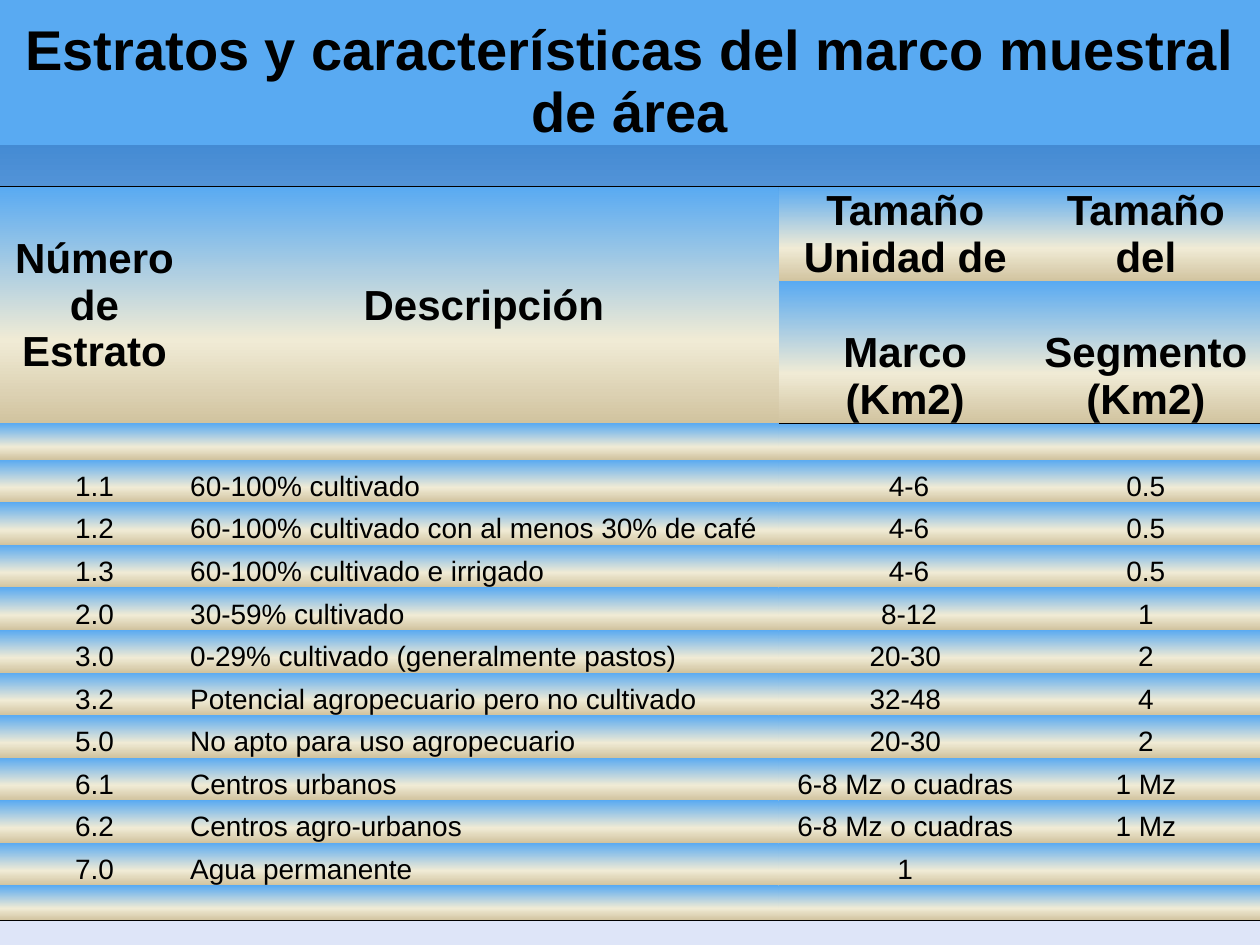
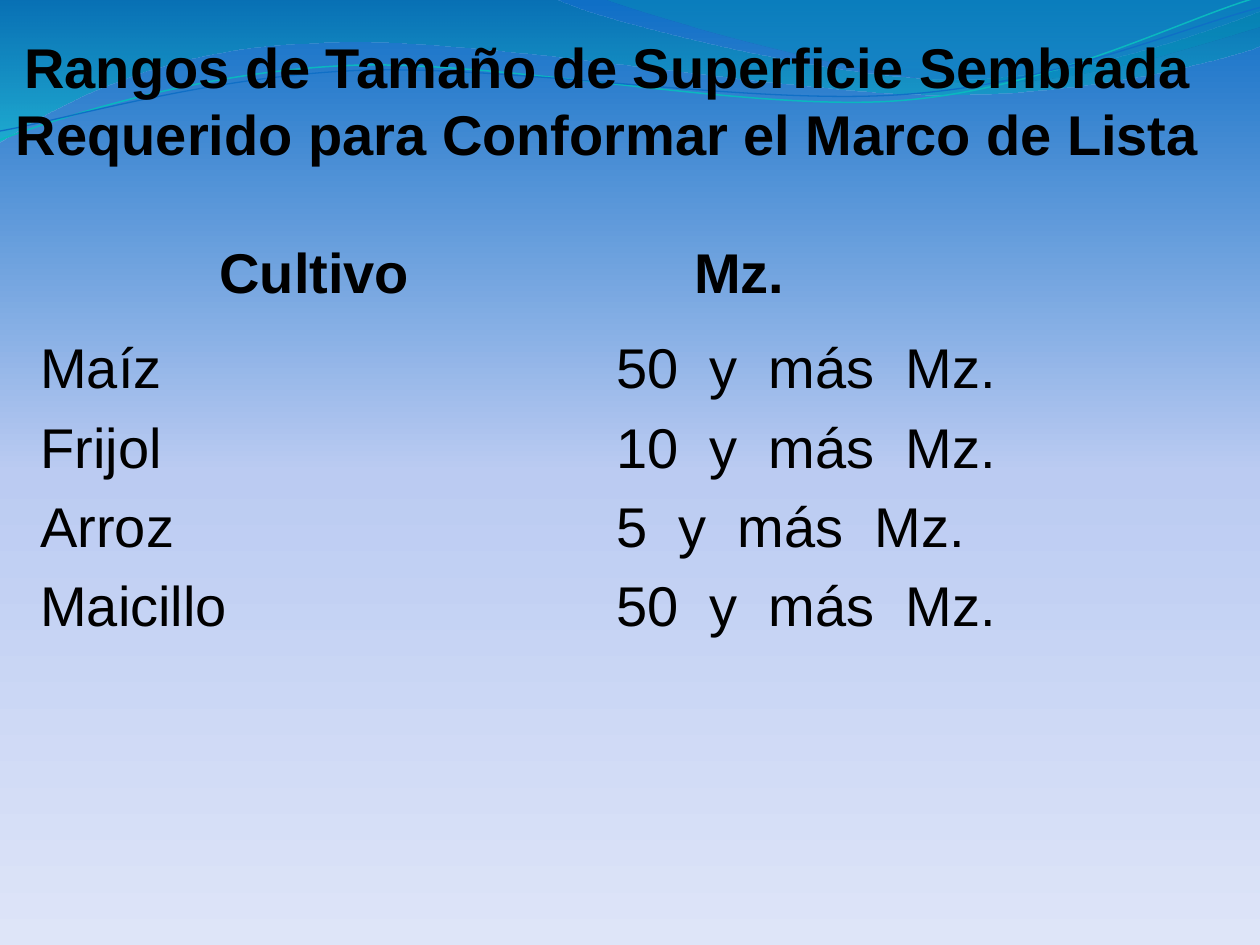
from dataclasses import dataclass
from typing import NamedTuple, Optional

import pptx
import pptx.dml.color
import pptx.enum.text
import pptx.oxml
import pptx.oxml.ns
import pptx.util

RGB = pptx.dml.color.RGBColor
ALIGN = pptx.enum.text.PP_ALIGN
ANCHOR = pptx.enum.text.MSO_ANCHOR
qn = pptx.oxml.ns.qn

# Shared look
FONT = "Arial"
BLACK = RGB(0x00, 0x00, 0x00)
SKY = RGB(0x59, 0xAA, 0xF2)
CREAM = RGB(0xF0, 0xEB, 0xD5)
SAND = RGB(0xD1, 0xC3, 0x9F)
BLUE = RGB(0x0F, 0x6F, 0xC6)
LILAC = RGB(0xBB, 0xCB, 0xF2)
PALE = RGB(0xDE, 0xE5, 0xF8)
DEEP_TEAL = RGB(0x00, 0x74, 0xA1)
AQUA = RGB(0x00, 0xC6, 0xCF)
GREEN_TEAL = RGB(0x00, 0xA1, 0xA9)
OCEAN = RGB(0x00, 0x8B, 0xBF)
TURQUOISE = RGB(0x0A, 0xB8, 0xBF)
TITLE_SIZE, HEAD_SIZE, BODY_SIZE = 32, 24, 16
PLAIN_TABLE = "{2D5ABB26-0587-4C30-8999-92F81FD0307C}"

# The slide is a grid of 10 columns by 7.5 rows of square units
SLIDE_W = pptx.util.Inches(10)
SLIDE_H = pptx.util.Inches(7.5)
UNIT = SLIDE_W / 10


def grid(units: float) -> int:
    return round(units * UNIT)


class Stop(NamedTuple):
    position: int
    color: RGB
    opacity: int = 100


class Insets(NamedTuple):
    left: float
    top: float
    right: float
    bottom: float


@dataclass(frozen=True)
class Wave:
    """A start point, then points (lines) or triples of points (curves)."""
    start: tuple
    segments: tuple
    stops: tuple = ()
    line: Optional[RGB] = None
    width: float = 0


class Stratum(NamedTuple):
    number: str
    description: str
    frame_size: str
    segment_size: str
    span: int = 2
    frame_indent: float = 0


class Crop(NamedTuple):
    name: str
    area: str


BACKDROP = (Stop(0, BLUE), Stop(50, LILAC), Stop(100, PALE))
CELL_STOPS = (Stop(0, SKY), Stop(65, CREAM), Stop(100, SAND))

WAVES = (
    Wave((0, 0), ((4.4, -0.01),
                  ((4.76, 0.17), (6.64, 0.63), (7.58, 0.63)),
                  ((8.53, 0.63), (9.58, 0.26), (10, 0.09)),
                  (10.01, 0.36),
                  ((9.83, 0.44), (8.7, 0.76), (7.46, 0.75)),
                  ((6.22, 0.75), (3.82, 0.28), (2.57, 0.34)),
                  ((1.29, 0.36), (0.46, 0.83), (-0.01, 1.13)),
                  (0, 0)),
         stops=(Stop(0, DEEP_TEAL, 45), Stop(100, AQUA, 55))),
    Wave((4.79, -0.01), (((5.09, 0.11), (6.82, 0.62), (7.69, 0.65)),
                         ((8.56, 0.69), (9.61, 0.32), (10, 0.21)),
                         (10, 0),
                         (4.79, -0.01)),
         stops=(Stop(0, GREEN_TEAL, 30), Stop(80, OCEAN, 45))),
    Wave((0, 1.11), (((0.48, 0.93), (1.58, 0.57), (2.77, 0.52)),
                     ((3.95, 0.47), (5.93, 0.89), (7.13, 0.8)),
                     ((8.33, 0.71), (9.38, 0.15), (9.98, -0.02))),
         line=TURQUOISE, width=0.85),
    Wave((0, 1.04), (((0.47, 0.96), (1.64, 0.61), (2.83, 0.56)),
                     ((4.03, 0.51), (5.97, 0.84), (7.17, 0.75)),
                     ((8.36, 0.67), (9.41, 0.21), (10, 0.06))),
         line=BLUE, width=0.75),
)

STRATA = (
    Stratum("1.1", "60-100% cultivado", "4-6", "0.5", frame_indent=0.06),
    Stratum("1.2", "60-100% cultivado con al menos 30% de café", "4-6", "0.5", 3, 0.06),
    Stratum("1.3", "60-100% cultivado e irrigado", "4-6", "0.5", frame_indent=0.06),
    Stratum("2.0", "30-59% cultivado", "8-12", "1", frame_indent=0.06),
    Stratum("3.0", "0-29% cultivado (generalmente pastos)", "20-30", "2", 3),
    Stratum("3.2", "Potencial agropecuario pero no cultivado", "32-48", "4", 3),
    Stratum("5.0", "No apto para uso agropecuario", "20-30", "2"),
    Stratum("6.1", "Centros urbanos", "6-8 Mz o cuadras", "1 Mz"),
    Stratum("6.2", "Centros agro-urbanos", "6-8 Mz o cuadras", "1 Mz"),
    Stratum("7.0", "Agua permanente", "1", ""),
)
STRATA_HEIGHT = 3.38

CROPS = (
    Crop("Maíz", "50 y más Mz."),
    Crop("Frijol", "10 y más Mz."),
    Crop("Arroz", "5 y más Mz."),
    Crop("Maicillo", "50 y más Mz."),
)


# Drawing helpers
def set_gradient(fill, owner, stops: tuple) -> None:
    """Give the owner element a top-to-bottom gradient."""
    fill.solid()
    marks = "".join(
        f'<a:gs pos="{s.position * 1000}"><a:srgbClr val="{s.color}">'
        f'<a:alpha val="{s.opacity * 1000}"/></a:srgbClr></a:gs>' for s in stops)
    gradient = pptx.oxml.parse_xml(
        f'<a:gradFill {pptx.oxml.ns.nsdecls("a")} rotWithShape="1">'
        f'<a:gsLst>{marks}</a:gsLst><a:lin ang="5400000" scaled="0"/></a:gradFill>')
    solid = owner.find(".//" + qn("a:solidFill"))
    solid.getparent().replace(solid, gradient)


def add_wave(slide, wave: Wave):
    steps = [s if isinstance(s[0], tuple) else (s,) for s in wave.segments]
    points = [(grid(x), grid(y)) for step in steps for x, y in step]
    builder = slide.shapes.build_freeform(*map(grid, wave.start))
    builder.add_line_segments(points, close=bool(wave.stops))
    sp = builder.convert_to_shape()
    # Turn each triple of points into one curve
    corners = iter(sp._element.findall(".//" + qn("a:lnTo")))
    for step in steps:
        first, *others = [next(corners) for _ in step]
        if others:
            first.tag = qn("a:cubicBezTo")
            for corner in others:
                first.append(corner[0])
                corner.getparent().remove(corner)
    sp.shadow.inherit = False
    if wave.stops:
        set_gradient(sp.fill, sp._element.spPr, wave.stops)
        sp.line.fill.background()
    else:
        sp.fill.background()
        sp.line.color.rgb = wave.line
        sp.line.width = pptx.util.Pt(wave.width)
    return sp


def build_master(prs, slide) -> None:
    """Draw the shared background and waves, and keep them on the master."""
    master = prs.slide_master
    set_gradient(master.background.fill, master._element.cSld, BACKDROP)
    for number, wave in enumerate(WAVES):
        element = add_wave(slide, wave)._element
        element.nvSpPr.cNvPr.id = 100 + number
        master.shapes._spTree.insert(2 + number, element)


def style_paragraph(p, size: float, bold: bool, align=ALIGN.LEFT) -> None:
    p.alignment = align
    p.font.name = FONT
    p.font.size = pptx.util.Pt(size)
    p.font.bold = bold
    p.font.color.rgb = BLACK


def add_table(slide, left: float, top: float, cols: tuple, rows: tuple):
    frame = slide.shapes.add_table(len(rows), len(cols), grid(left), grid(top),
                                   grid(sum(cols)), grid(sum(rows)))
    table = frame.table
    table.first_row = table.horz_banding = False
    table._tbl.tblPr.find(qn("a:tableStyleId")).text = PLAIN_TABLE
    for column, width in zip(table.columns, cols):
        column.width = grid(width)
    for row, height in zip(table.rows, rows):
        row.height = grid(height)
    return table


def write_cell(cell, text: str, size: float, bold: bool, insets: Insets,
               align=ALIGN.CENTER, anchor=ANCHOR.BOTTOM) -> None:
    cell.margin_left, cell.margin_top, cell.margin_right, cell.margin_bottom = map(grid, insets)
    cell.vertical_anchor = anchor
    p = cell.text_frame.paragraphs[0]
    style_paragraph(p, size, bold, align)
    if text:
        p.add_run().text = text


def rule_row(table, row: int, edge: str, color: Optional[RGB] = BLACK) -> None:
    """Set a thin border, or none, on one edge ("T" or "B") of a row."""
    paint = (f'<a:solidFill><a:srgbClr val="{color}"/></a:solidFill>'
             if color is not None else "<a:noFill/>")
    for cell in table.rows[row].cells:
        cell._tc.get_or_add_tcPr().insert(0, pptx.oxml.parse_xml(
            f'<a:ln{edge} {pptx.oxml.ns.nsdecls("a")} w="6350">{paint}</a:ln{edge}>'))


def widen_spaces(p, text: str, extra: float) -> None:
    """Write words separated by spaces that are wider by some points."""
    for i, word in enumerate(text.split(" ")):
        if i:
            r = p.add_run()
            r.text = " "
            r._r.get_or_add_rPr().set("spc", str(round(extra * 100)))
        p.add_run().text = word


# Slides
def build_strata_slide(slide) -> None:
    insets = Insets(0.01, 0.01, 0.01, 0)

    banner = add_table(slide, 0, 0, (10,), (1.15,)).cell(0, 0)
    write_cell(banner, "Estratos y características del marco muestral de área",
               TITLE_SIZE, True, insets)
    banner.fill.solid()
    banner.fill.fore_color.rgb = SKY

    heights = (0.75, 1.12, 0.29) + (STRATA_HEIGHT / len(STRATA),) * len(STRATA) + (0.28,)
    table = add_table(slide, 0, 1.48, (1.5, 1.43, 1.73, 1.52, 2.01, 1.81), heights)
    for cell in table.iter_cells():
        set_gradient(cell.fill, cell._tc.get_or_add_tcPr(), CELL_STOPS)
    last = len(heights) - 1
    for row, edge in ((0, "T"), (1, "B"), (last, "B")):
        rule_row(table, row, edge)
    rule_row(table, 2, "B", None)

    # Two-row heading
    table.cell(0, 0).merge(table.cell(1, 0))
    table.cell(0, 1).merge(table.cell(1, 3))
    for row, col, text, anchor in (
            (0, 0, "Número de Estrato", ANCHOR.MIDDLE),
            (0, 1, "Descripción", ANCHOR.MIDDLE),
            (0, 4, "Tamaño Unidad de", ANCHOR.BOTTOM),
            (0, 5, "Tamaño del", ANCHOR.BOTTOM),
            (1, 4, "Marco (Km2)", ANCHOR.BOTTOM),
            (1, 5, "Segmento (Km2)", ANCHOR.BOTTOM)):
        write_cell(table.cell(row, col), text, HEAD_SIZE, True, insets, anchor=anchor)

    # Strata, between two empty rows
    for row in (2, last):
        for cell in table.rows[row].cells:
            write_cell(cell, "", BODY_SIZE, False, insets)
    for row, stratum in enumerate(STRATA, start=3):
        table.cell(row, 1).merge(table.cell(row, stratum.span))
        texts = (stratum.number, stratum.description, "", "",
                 stratum.frame_size, stratum.segment_size)
        for col, text in enumerate(texts):
            indent = stratum.frame_indent if col == 4 else 0
            write_cell(table.cell(row, col), text, BODY_SIZE, False,
                       insets._replace(left=insets.left + indent),
                       ALIGN.LEFT if col == 1 else ALIGN.CENTER)


def build_crops_slide(slide) -> None:
    box = slide.shapes.add_textbox(0, grid(0.21), grid(9.65), grid(1.18))
    tf = box.text_frame
    tf.word_wrap = True
    p = tf.paragraphs[0]
    style_paragraph(p, TITLE_SIZE, True, ALIGN.CENTER)
    p.add_run().text = ("Rangos de Tamaño de Superficie Sembrada "
                        "Requerido para Conformar el Marco de Lista")

    insets = Insets(0.05, 0, 0.05, 0)
    table = add_table(slide, 0.27, 1.8, (4.57, 4.17), (0.75,) + (0.63,) * len(CROPS))
    for cell in table.iter_cells():
        cell.fill.background()
    write_cell(table.cell(0, 0), "Cultivo", TITLE_SIZE, True,
               insets._replace(right=0.17), anchor=ANCHOR.MIDDLE)
    write_cell(table.cell(0, 1), "Mz.", TITLE_SIZE, True,
               insets._replace(left=0.67), ALIGN.LEFT, ANCHOR.MIDDLE)
    for row, crop in enumerate(CROPS, start=1):
        name, area = table.cell(row, 0), table.cell(row, 1)
        write_cell(name, crop.name, TITLE_SIZE, False, insets, ALIGN.LEFT)
        write_cell(area, "", TITLE_SIZE, False, insets, ALIGN.LEFT)
        widen_spaces(area.text_frame.paragraphs[0], crop.area, 8.9)


def main() -> None:
    prs = pptx.Presentation()
    prs.slide_width, prs.slide_height = SLIDE_W, SLIDE_H
    blank = prs.slide_layouts[6]
    strata, crops = (prs.slides.add_slide(blank) for _ in range(2))
    build_master(prs, strata)
    build_strata_slide(strata)
    build_crops_slide(crops)
    prs.save("out.pptx")


if __name__ == "__main__":
    main()
